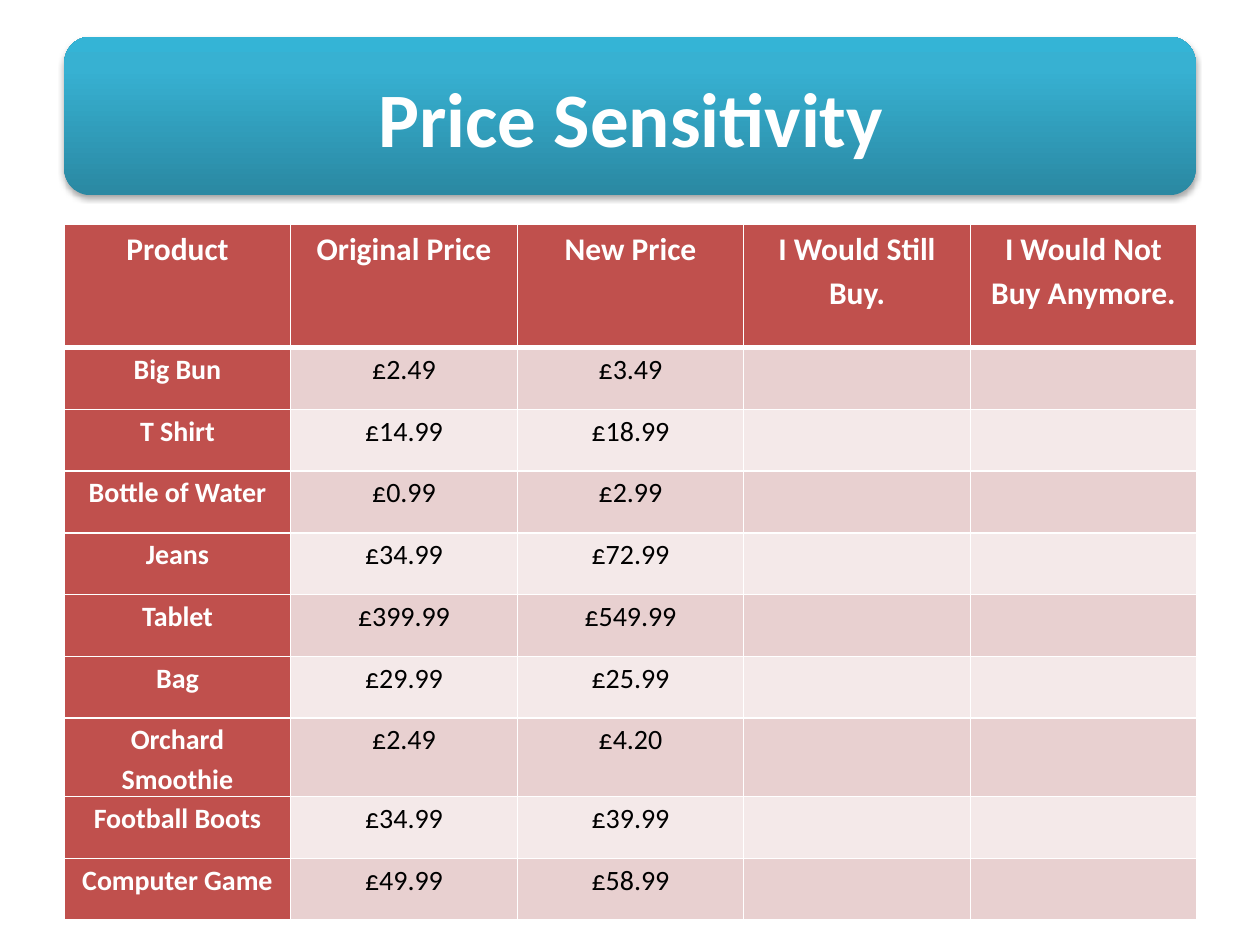
from copy import deepcopy

from lxml import etree
from pptx import Presentation
from pptx.dml.color import RGBColor
from pptx.enum.shapes import MSO_SHAPE
from pptx.enum.text import MSO_ANCHOR, PP_ALIGN
from pptx.oxml.ns import qn
from pptx.util import Inches, Pt

ROUNDED = MSO_SHAPE.ROUNDED_RECTANGLE
CENTER = PP_ALIGN.CENTER
MIDDLE = MSO_ANCHOR.MIDDLE
TITLE_ONLY = 5
FONT = "Calibri"
LEFT, WIDTH = 0.51, 8.99
ROW_HEIGHT = 0.49
COLORS = {
    "white": "FFFFFF",
    "black": "000000",
    "red": "C0504D",
    "band_dark": "E8D0D0",
    "band_light": "F4E9E9",
}
BANNER_STOPS = [(0, "2A88A2"), (0.8, "37B1D2"), (1, "34B4D6")]
HEADERS = ["Product", "Original Price", "New Price", "I Would Still Buy.", "I Would Not Buy Anymore."]
PRODUCTS = [
    ("Big Bun", "£2.49", "£3.49"),
    ("T Shirt", "£14.99", "£18.99"),
    ("Bottle of Water", "£0.99", "£2.99"),
    ("Jeans", "£34.99", "£72.99"),
    ("Tablet", "£399.99", "£549.99"),
    ("Bag", "£29.99", "£25.99"),
    ("Orchard Smoothie", "£2.49", "£4.20"),
    ("Football Boots", "£34.99", "£39.99"),
    ("Computer Game", "£49.99", "£58.99"),
]


def format_paragraph(paragraph, size, color, bold):
    """Centre a paragraph and set its font."""
    paragraph.alignment = CENTER
    font = paragraph.font
    font.name, font.size, font.bold = FONT, Pt(size), bold
    font.color.rgb = RGBColor.from_string(COLORS[color])


def add_shadow(shape):
    """Give a shape a soft shadow that falls downwards."""
    shape.shadow.inherit = False
    effects = shape._element.spPr.find(qn("a:effectLst"))
    shadow = etree.SubElement(
        effects, qn("a:outerShdw"), blurRad=str(Pt(3.1)), dist=str(Pt(1.8)),
        dir="5400000", rotWithShape="0",
    )
    color = etree.SubElement(shadow, qn("a:srgbClr"), val=COLORS["black"])
    etree.SubElement(color, qn("a:alpha"), val="35000")


def add_banner(slide):
    """Draw the rounded gradient banner behind the title."""
    banner = slide.shapes.add_shape(ROUNDED, Inches(LEFT), Inches(0.29), Inches(8.98), Inches(1.26))
    banner.line.fill.background()
    banner.fill.gradient()
    banner.fill.gradient_angle = 90
    stop_list = banner._element.spPr.find(".//" + qn("a:gsLst"))
    stop_list.append(deepcopy(stop_list[0]))
    for stop, (position, color) in zip(banner.fill.gradient_stops, BANNER_STOPS):
        stop.position = position
        stop.color.rgb = RGBColor.from_string(color)
    add_shadow(banner)
    slide.shapes.title._element.addprevious(banner._element)


def set_title(slide, text):
    """Place and format the title placeholder."""
    title = slide.shapes.title
    title.left, title.top = Inches(LEFT), Inches(0.3)
    title.width, title.height = Inches(9), Inches(1.25)
    title.text_frame.text = text
    title.text_frame.vertical_anchor = MIDDLE
    format_paragraph(title.text_frame.paragraphs[0], 44, "white", True)


def set_borders(cell, top, bottom):
    """Draw white borders round a cell, with the given top and bottom widths."""
    properties = cell._tc.get_or_add_tcPr()
    for tag, width in (("lnL", 1), ("lnR", 1), ("lnT", top), ("lnB", bottom)):
        line = etree.SubElement(properties, qn(f"a:{tag}"), w=str(Pt(width)))
        fill = etree.SubElement(line, qn("a:solidFill"))
        etree.SubElement(fill, qn("a:srgbClr"), val=COLORS["white"])


def format_cell(cell, row, column):
    """Set borders and fill according to the cell's place in the table."""
    set_borders(cell, 3 if row == 1 else 1, 3 if row == 0 else 1)
    band = "band_dark" if row % 2 else "band_light"
    color = "red" if row == 0 or column == 0 else band
    cell.fill.solid()
    cell.fill.fore_color.rgb = RGBColor.from_string(COLORS[color])


def write_cell(cell, text, row, column):
    """Write a cell's text, in bold white for the headings."""
    heading = row == 0 or column == 0
    cell.margin_left = cell.margin_right = Inches(0.07)
    cell.margin_top = cell.margin_bottom = 0
    cell.text = text
    paragraph = cell.text_frame.paragraphs[0]
    paragraph.line_spacing = 1.15
    format_paragraph(paragraph, 16 if row else 18, "white" if heading else "black", heading)


def add_price_table(slide):
    """Add the table of products and prices."""
    rows = [HEADERS, *PRODUCTS]
    table = slide.shapes.add_table(
        len(rows), len(HEADERS), Inches(LEFT), Inches(1.78),
        Inches(WIDTH), Inches(ROW_HEIGHT * (len(rows) + 1)),
    ).table
    for row, texts in enumerate(rows):
        table.rows[row].height = Inches(ROW_HEIGHT if row else 2 * ROW_HEIGHT)
        for column in range(len(HEADERS)):
            format_cell(table.cell(row, column), row, column)
        for column, text in enumerate(texts):
            write_cell(table.cell(row, column), text, row, column)


def main():
    """Build and save the slide."""
    presentation = Presentation()
    presentation.slide_width, presentation.slide_height = Inches(10), Inches(7.5)
    slide = presentation.slides.add_slide(presentation.slide_layouts[TITLE_ONLY])
    set_title(slide, "Price Sensitivity")
    add_banner(slide)
    add_price_table(slide)
    presentation.save("out.pptx")


if __name__ == "__main__":
    main()
